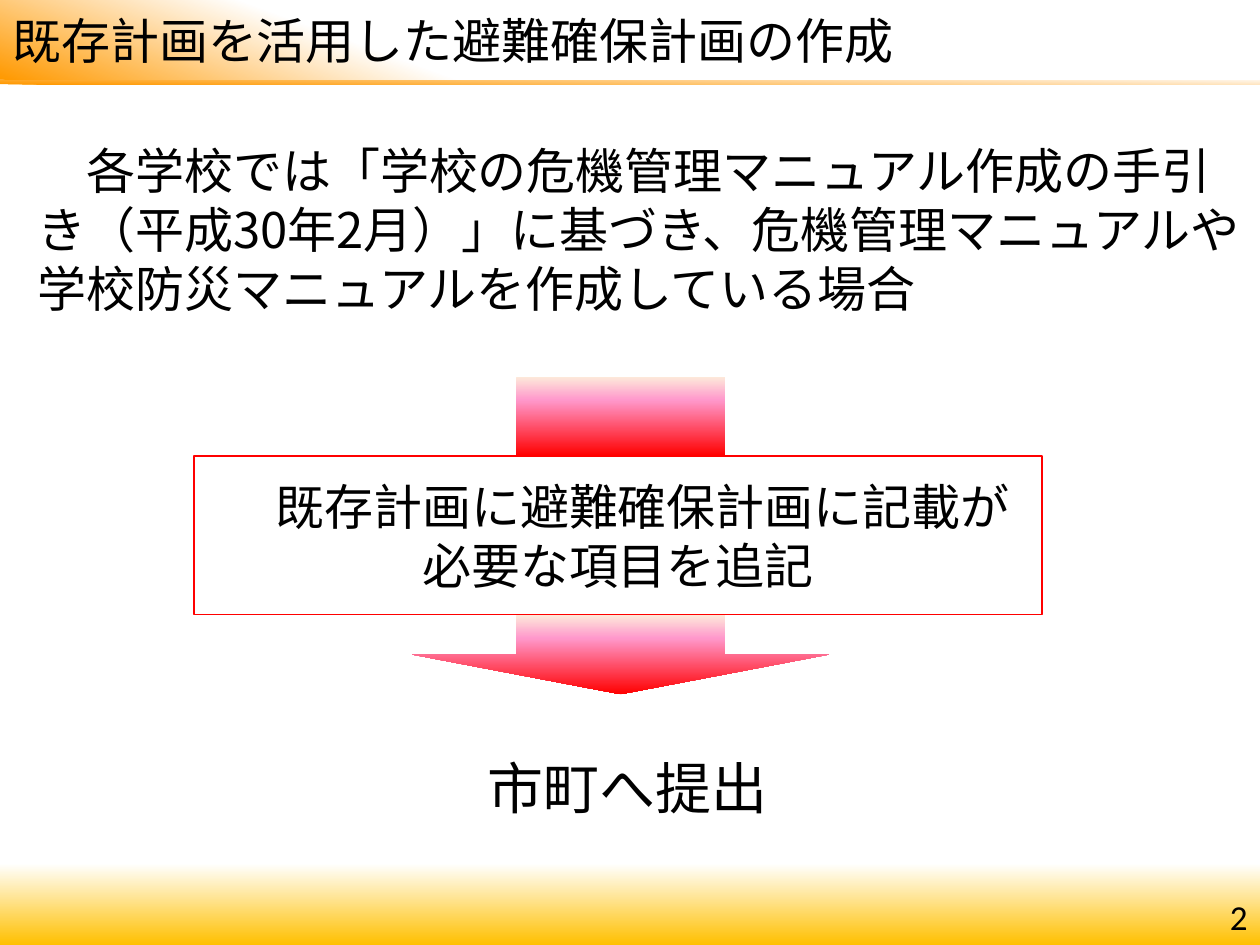
from dataclasses import dataclass
from lxml.etree import SubElement as Sub
from pptx import Presentation
from pptx.dml.color import RGBColor as RGB
from pptx.enum.shapes import MSO_SHAPE as Kind
from pptx.enum.text import MSO_ANCHOR as Anchor, PP_ALIGN as Align
from pptx.oxml.ns import qn
from pptx.util import Inches, Pt


@dataclass(frozen=True)
class Theme:
    ink: str = "000000"
    red: str = "FF0000"
    head: tuple = ((0, "FF9900"), (31, "FFFFFF"))
    rule: tuple = ((0, "FF9900"), (27, "FFFFFF"))
    foot: tuple = ((0, "FFC000"), (85, "FFFFFF"), (100, "FFFFFF"))
    flow: tuple = ((0, "FDEADA"), (29, "FF99CC"), (100, "FF0000"))
    sans: str = "Noto Sans CJK JP"
    num: str = "Calibri"
    small: int = 20
    body: int = 28
    large: int = 32
    lead: float = 1.2


T = Theme()
WIDE, HIGH = 10, 7.5


def shade(shape, stops, angle):
    shape.fill.gradient()
    grad = shape.fill._xPr.find(qn("a:gradFill"))
    for kid in list(grad):
        grad.remove(kid)
    row = Sub(grad, qn("a:gsLst"))
    for pos, color in stops:
        stop = Sub(row, qn("a:gs"), pos=str(pos * 1000))
        Sub(stop, qn("a:srgbClr"), val=color)
    Sub(grad, qn("a:lin"), ang=str(angle * 60000), scaled="0")


def block(slide, box, kind=Kind.RECTANGLE, stops=None, angle=90, line=None):
    shape = slide.shapes.add_shape(kind, *map(Inches, box))
    shape.shadow.inherit = False
    if stops:
        shade(shape, stops, angle)
    else:
        shape.fill.background()
    if line:
        shape.line.color.rgb = RGB.from_string(line)
        shape.line.width = Pt(0.75)
    else:
        shape.line.fill.background()
    return shape


def label(slide, box):
    return slide.shapes.add_textbox(*map(Inches, box))


def write(shape, text, size=T.body, font=T.sans, align=Align.LEFT,
          anchor=Anchor.MIDDLE, indent=0):
    frame = shape.text_frame
    frame.word_wrap = True
    frame.vertical_anchor = anchor
    frame.text = text
    for para in frame.paragraphs:
        para.alignment = align
        para.line_spacing = Pt(size * T.lead)
        for run in para.runs:
            run.font.size = Pt(size)
            run.font.name = font
            run.font.color.rgb = RGB.from_string(T.ink)
            Sub(run.font._element, qn("a:ea"), typeface=font)
    if indent:
        props = frame.paragraphs[0]._p.get_or_add_pPr()
        props.set("marL", "0")
        props.set("indent", str(Pt(size * indent)))


def footer(slide, box, number):
    left, top, wide, high = box
    block(slide, box, stops=T.foot, angle=270)
    page = label(slide, (left + wide - 2.33, top + 0.33, 2.33, 0.4))
    write(page, number, size=T.small, font=T.num, align=Align.RIGHT)


def header(slide, box, title):
    left, top, wide, high = box
    block(slide, box, stops=T.rule, angle=271)
    bar = block(slide, (left, top, wide, high - 0.04), stops=T.head, angle=290)
    write(bar, title)


def flow(slide, box, text):
    left, top, wide, high = box
    step = high / 4
    slim = 3.31
    side = left + 1.73
    stem = block(slide, (side, top, slim, step), Kind.DOWN_ARROW, T.flow)
    stem.adjustments[1] = 0
    block(slide, (side, top + 3 * step, slim, step), Kind.DOWN_ARROW, T.flow)
    card = block(slide, (left, top + step, wide, 2 * step), line=T.red)
    write(card, text, align=Align.CENTER, indent=1)


def main():
    deck = Presentation()
    deck.slide_width, deck.slide_height = Inches(WIDE), Inches(HIGH)
    slide = deck.slides.add_slide(deck.slide_layouts[6])
    footer(slide, (0, HIGH - 0.76, WIDE, 0.76), "2")
    header(slide, (0, 0, WIDE, 0.67), "既存計画を活用した避難確保計画の作成")
    write(label(slide, (0.2, 1.07, WIDE - 0.2, 1.73)),
          "各学校では「学校の危機管理マニュアル作成の手引き（平成30年2月）」"
          "に基づき、危機管理マニュアルや学校防災マニュアルを作成している場合",
          anchor=Anchor.TOP, indent=1)
    write(label(slide, (3.11, 5.67, 3.74, 1.15)), "市町へ提出",
          size=T.large, align=Align.CENTER)
    flow(slide, (1.54, 2.99, 6.73, 2.52),
         "既存計画に避難確保計画に記載が\n必要な項目を追記")
    deck.save("out.pptx")


if __name__ == "__main__":
    main()
